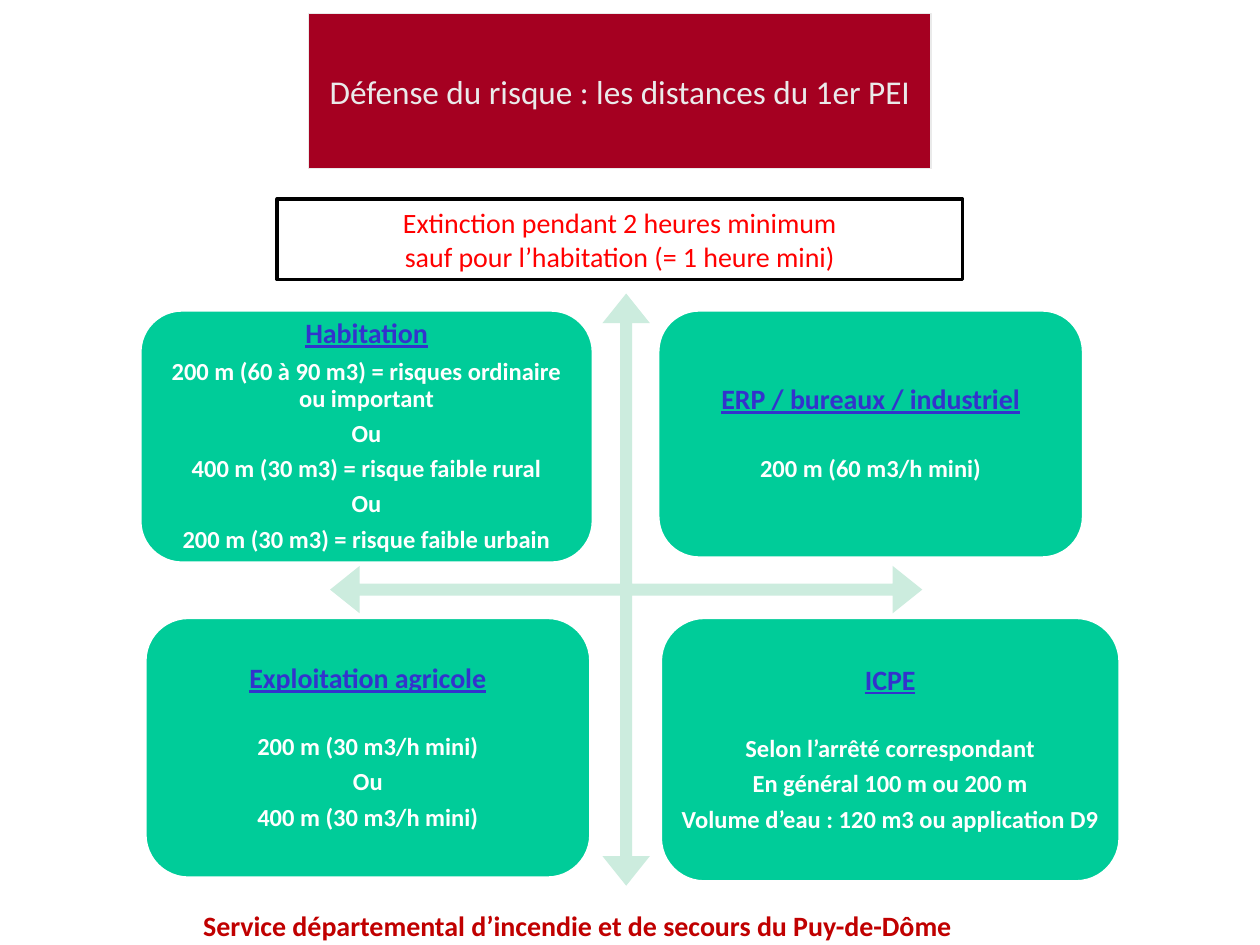
from lxml import etree
from pptx import Presentation
from pptx import util as u
from pptx.dml.color import RGBColor
from pptx.enum import shapes, text
from pptx.oxml.ns import qn

FONT = "Calibri"
WHITE = RGBColor(0xFF, 0xFF, 0xFF)
BLACK = RGBColor(0, 0, 0)
RED = RGBColor(0xFF, 0, 0)
DARK_RED = RGBColor(0xC0, 0, 0)
CRIMSON = RGBColor(0xA5, 0, 0x21)
PALE_GREY = RGBColor(0xEA, 0xEA, 0xEA)
GREEN = RGBColor(0, 0xCC, 0x99)
PALE_GREEN = RGBColor(0xCC, 0xEC, 0xDE)
BLUE = RGBColor(0x33, 0x33, 0xCC)

# Each card: left, top, width, height, heading, space after heading, lines
CARDS = [
    (1.11, 2.46, 3.6, 2.01, "Habitation", 5.5,
     ["200 m (60 à 90 m3) = risques ordinaire ou important", "Ou",
      "400 m (30 m3) = risque faible rural", "Ou",
      "200 m (30 m3) = risque faible urbain"]),
    (5.22, 2.46, 3.38, 1.97, "ERP / bureaux / industriel", 23,
     ["200 m (60 m3/h mini)"]),
    (1.15, 4.9, 3.54, 2.07, "Exploitation agricole", 23,
     ["200 m (30 m3/h mini)", "Ou", "400 m (30 m3/h mini)"]),
    (5.24, 4.9, 3.65, 2.1, "ICPE", 23,
     ["Selon l’arrêté correspondant", "En général 100 m ou 200 m",
      "Volume d’eau : 120 m3 ou application D9"]),
]


def style_shape(shape, fill, line=None, width=0):
    shape.fill.solid()
    shape.fill.fore_color.rgb = fill
    if line is None:
        shape.line.fill.background()
    else:
        shape.line.color.rgb = line
        shape.line.width = u.Pt(width)


def add_shape(slide, kind, box, fill, line=None, width=0):
    shape = slide.shapes.add_shape(kind, *map(u.Inches, box))
    shape.shadow.inherit = False
    style_shape(shape, fill, line, width)
    return shape


def write_lines(frame, lines, size, color, bold=False):
    """Fill a text frame with one centred paragraph per line."""
    frame.text = "\n".join(lines)
    frame.vertical_anchor = text.MSO_ANCHOR.MIDDLE
    for paragraph in frame.paragraphs:
        paragraph.alignment = text.PP_ALIGN.CENTER
        font = paragraph.font
        font.name, font.size, font.bold = FONT, u.Pt(size), bold
        font.color.rgb = color


def add_title(slide, box, title_text):
    title = slide.shapes.title
    title.left, title.top, title.width, title.height = map(u.Inches, box)
    properties = title._element.spPr
    geometry = etree.SubElement(properties, qn("a:prstGeom"), prst="ellipse")
    etree.SubElement(geometry, qn("a:avLst"))
    style_shape(title, CRIMSON, PALE_GREY, 0.75)
    write_lines(title.text_frame, [title_text], 19, PALE_GREY)
    title.text_frame.auto_size = text.MSO_AUTO_SIZE.NONE
    title.text_frame.word_wrap = False


def add_card(slide, left, top, width, height, heading, gap, lines):
    card = add_shape(slide, shapes.MSO_SHAPE.ROUNDED_RECTANGLE,
                     (left, top, width, height), GREEN, WHITE, 2)
    frame = card.text_frame
    frame.margin_left = frame.margin_right = u.Inches(0.06)
    frame.margin_top = frame.margin_bottom = u.Inches(0.06)
    write_lines(frame, [heading, *lines], 14, WHITE, bold=True)
    for paragraph in frame.paragraphs:
        paragraph.line_spacing = 0.9
        paragraph.space_after = u.Pt(5)
    first = frame.paragraphs[0]
    first.space_after = u.Pt(gap)
    first.font.size = u.Pt(16)
    first.font.underline = True
    first.font.color.rgb = BLUE


def main():
    presentation = Presentation()
    presentation.slide_width = u.Inches(10)
    presentation.slide_height = u.Inches(7.5)
    slide = presentation.slides.add_slide(presentation.slide_layouts[5])

    # Title and duration notice
    add_title(slide, (2.45, 0.11, 4.94, 1.23),
              "Défense du risque : les distances du 1er PEI")
    notice = add_shape(slide, shapes.MSO_SHAPE.RECTANGLE,
                       (2.2, 1.58, 5.44, 0.64), WHITE, BLACK, 2)
    write_lines(notice.text_frame,
                ["Extinction pendant 2 heures minimum",
                 "sauf pour l’habitation (= 1 heure mini)"], 16, RED)

    # Four-way arrow behind the cards
    arrow = add_shape(slide, shapes.MSO_SHAPE.QUAD_ARROW,
                      (2.62, 2.33, 4.7, 4.7), PALE_GREEN)
    for index, share in enumerate((0.02, 0.04, 0.05)):
        arrow.adjustments[index] = share

    # Risk cards
    for card in CARDS:
        add_card(slide, *card)

    # Footer
    footer = slide.shapes.add_textbox(
        *map(u.Inches, (0, 7.16, 9.17, 0.37)))
    footer.text_frame.word_wrap = True
    write_lines(footer.text_frame,
                ["Service départemental d’incendie et de secours du "
                 "Puy-de-Dôme"], 16, DARK_RED, bold=True)

    presentation.save("out.pptx")


if __name__ == "__main__":
    main()
